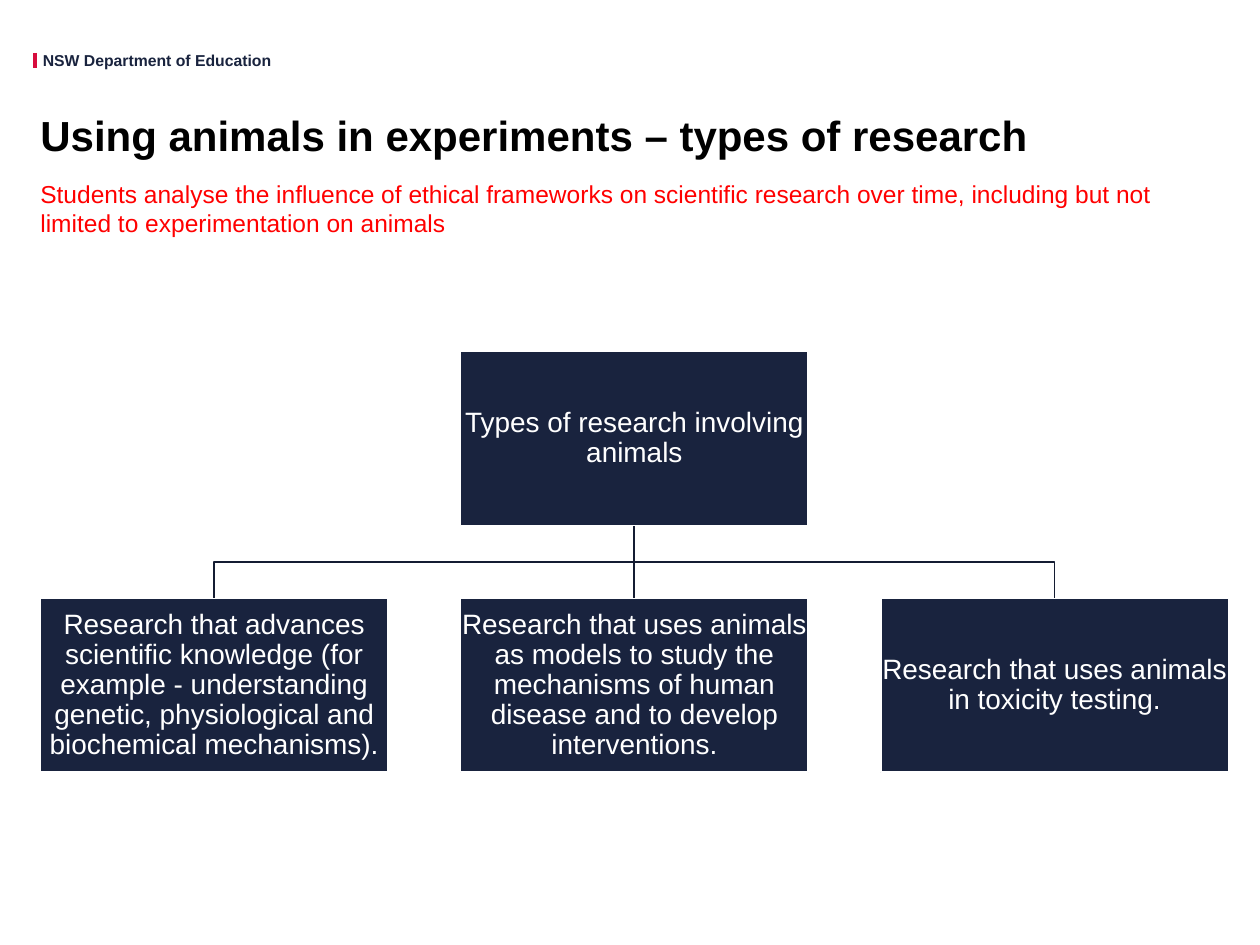
from lxml.etree import SubElement
from pptx import Presentation
from pptx.dml.color import RGBColor
from pptx.enum.shapes import MSO_CONNECTOR, MSO_SHAPE
from pptx.enum.text import MSO_ANCHOR, MSO_AUTO_SIZE, PP_ALIGN
from pptx.oxml.ns import qn
from pptx.util import Inches, Pt

NAVY, RED, CRIMSON = "19233E", "FF0000", "D70C3D"
BLACK, WHITE, LINK = "000000", "FFFFFF", "141C32"

ROOT = "Types of research involving animals"
BRANCHES = [
    "Research that advances scientific knowledge (for example - understanding "
    "genetic, physiological and biochemical mechanisms).",
    "Research that uses animals as models to study the mechanisms of human "
    "disease and to develop interventions.",
    "Research that uses animals in toxicity testing.",
]


def color(hex_value):
    return RGBColor.from_string(hex_value)


def place(shape, left, top, width, height):
    shape.left, shape.top = Inches(left), Inches(top)
    shape.width, shape.height = Inches(width), Inches(height)


def write(shape, text, size, hex_value, bold=False, align=PP_ALIGN.LEFT,
          anchor=MSO_ANCHOR.TOP, insets=(0, 0, 0, 0), spacing=1.0, wrap=True):
    frame = shape.text_frame
    frame.auto_size = MSO_AUTO_SIZE.NONE
    frame.word_wrap = wrap
    frame.vertical_anchor = anchor
    (frame.margin_left, frame.margin_top,
     frame.margin_right, frame.margin_bottom) = map(Inches, insets)
    paragraph = frame.paragraphs[0]
    paragraph.alignment = align
    paragraph.line_spacing = spacing
    paragraph.space_before = Pt(0)
    run = paragraph.add_run()
    run.text = text
    run.font.name, run.font.size, run.font.bold = "Arial", Pt(size), bold
    run.font.color.rgb = color(hex_value)
    return paragraph


def straight_line(slide, x1, y1, x2, y2, hex_value, weight):
    line = slide.shapes.add_connector(
        MSO_CONNECTOR.STRAIGHT, Inches(x1), Inches(y1), Inches(x2), Inches(y2))
    line.line.color.rgb = color(hex_value)
    line.line.width = Pt(weight)
    SubElement(line._element.spPr, qn("a:effectLst"))


def add_header(slide, left, top, width, height):
    straight_line(slide, left, top + 0.02, left, top + 0.14, CRIMSON, 2.5)
    department = slide.shapes.add_textbox(0, 0, 0, 0)
    place(department, left + 0.06, top, width - 0.06, height)
    write(department, "NSW Department of Education", 9, NAVY, bold=True, wrap=False)


def add_heading(slide, left, top, width, height):
    # Title in the upper half, syllabus statement in the lower half
    title, statement = slide.placeholders
    place(title, left, top, width, height / 2)
    write(title, "Using animals in experiments – types of research", 24, BLACK,
          bold=True, anchor=MSO_ANCHOR.MIDDLE, spacing=0.9)
    place(statement, left, top + height / 2, width, height / 2)
    paragraph = write(
        statement, "Students analyse the influence of ethical frameworks on scientific "
        "research over time, including but not limited to experimentation on animals",
        14, RED, insets=(0, 0.05, 0.1, 0.05))
    paragraph.space_after = Pt(4.5)
    properties = paragraph._p.get_or_add_pPr()
    properties.set("marL", "0")
    properties.set("indent", "0")
    SubElement(properties, qn("a:buNone"))


def add_node(slide, text, left, top, width, height):
    node = slide.shapes.add_shape(MSO_SHAPE.RECTANGLE, 0, 0, 0, 0)
    place(node, left, top, width, height)
    node.shadow.inherit = False
    node.fill.solid()
    node.fill.fore_color.rgb = color(NAVY)
    node.line.color.rgb = color(WHITE)
    node.line.width = Pt(1)
    write(node, text, 16, WHITE, align=PP_ALIGN.CENTER, anchor=MSO_ANCHOR.MIDDLE,
          insets=(0.01,) * 4, spacing=0.9)


def add_link(slide, x1, y1, x2, y2):
    if x1 == x2:
        straight_line(slide, x1, y1, x2, y2, LINK, 1)
        return
    middle = (y1 + y2) / 2
    bends = [(x1, middle), (x2, middle), (x2, y2)]
    builder = slide.shapes.build_freeform(Inches(x1), Inches(y1))
    builder.add_line_segments([(Inches(x), Inches(y)) for x, y in bends], close=False)
    link = builder.convert_to_shape()
    link.shadow.inherit = False
    link.fill.background()
    link.line.color.rgb = color(LINK)
    link.line.width = Pt(1)


def add_hierarchy(slide, left, top, width, height):
    node_width, node_height = 2.76, 1.38
    step = (width - node_width) / (len(BRANCHES) - 1)
    root_left = left + (width - node_width) / 2
    root_center = left + width / 2
    branch_top = top + height - node_height
    branch_lefts = [left + i * step for i in range(len(BRANCHES))]

    # Links lie behind the nodes
    for branch_left in branch_lefts:
        center = round(branch_left + node_width / 2, 3)
        add_link(slide, round(root_center, 3), top + node_height, center, branch_top)
    add_node(slide, ROOT, root_left, top, node_width, node_height)
    for text, branch_left in zip(BRANCHES, branch_lefts):
        add_node(slide, text, branch_left, branch_top, node_width, node_height)


def main():
    deck = Presentation()
    deck.slide_width, deck.slide_height = Inches(10), Inches(7.5)
    slide = deck.slides.add_slide(deck.slide_layouts[1])
    add_header(slide, 0.28, 0.4, 1.89, 0.15)
    add_heading(slide, 0.32, 0.82, 9.43, 1.1)
    add_hierarchy(slide, 0.32, 2.79, 9.43, 3.34)
    deck.save("out.pptx")


if __name__ == "__main__":
    main()
